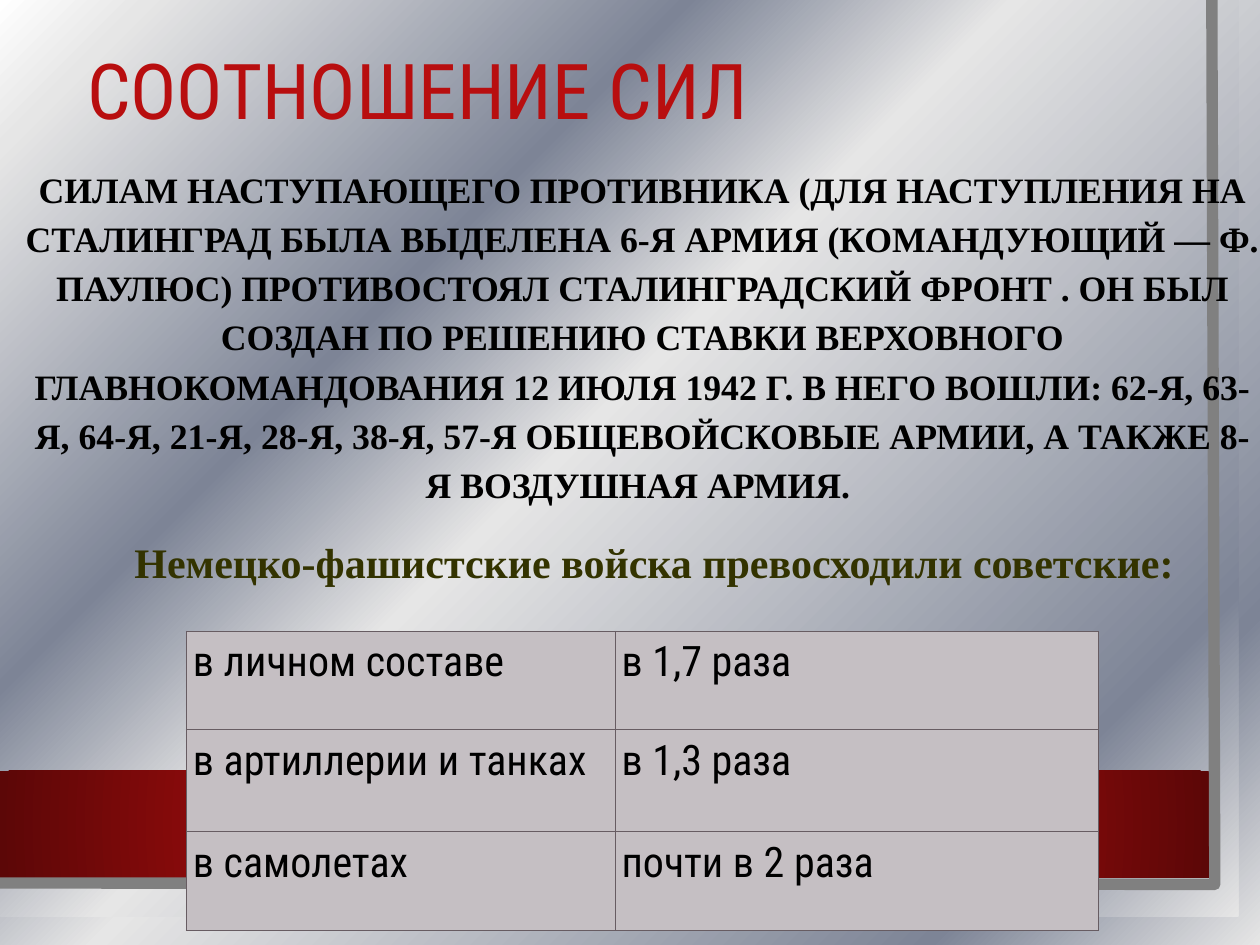
from lxml import etree
from pptx import Presentation
from pptx import util as u
from pptx.dml.color import RGBColor
from pptx.enum import shapes, text
from pptx.oxml import ns

COLORS = {
    "red": "B80E0F", "dark_red": "5C0707", "grey": "808080", "black": "000000",
    "olive": "333300", "cell": "C5BFC3", "border": "675C62",
    "white": "FFFFFF", "silver": "E6E6E6", "steel": "7D8496",
}
STEEL = [(0, "white"), (7, "silver"), (32, "steel"), (47, "silver"), (85, "steel"), (100, "silver")]
BAND = [(34, "red"), (100, "dark_red")]
SANS, SERIF = "Roboto Condensed", "Times New Roman"


def rgb(name):
    return RGBColor.from_string(COLORS[name])


def sub(parent, tag, **attrs):
    return etree.SubElement(parent, ns.qn(tag), {k: str(v) for k, v in attrs.items()})


class Deck:
    def __init__(self, width, height):
        self.prs = Presentation()
        self.prs.slide_width, self.prs.slide_height = u.Cm(width), u.Cm(height)
        self.s = self.prs.slides.add_slide(self.prs.slide_layouts[1])

    def gradient(self, fill, root, stops, angle=None):
        fill.gradient()
        grad = root.find(".//" + ns.qn("a:gradFill"))
        for child in list(grad):
            grad.remove(child)
        gs_list = sub(grad, "a:gsLst")
        for pos, color in stops:
            sub(sub(gs_list, "a:gs", pos=pos * 1000), "a:srgbClr", val=COLORS[color])
        if angle is None:
            circle = sub(grad, "a:path", path="circle")
            sub(circle, "a:fillToRect", l=50000, t=50000, r=50000, b=50000)
        else:
            sub(grad, "a:lin", ang=angle * 60000, scaled=0)

    def background(self, stops, angle):
        self.gradient(self.s.background.fill, self.s.element, stops, angle)

    def rect(self, box, stops, angle=None):
        sp = self.s.shapes.add_shape(shapes.MSO_SHAPE.RECTANGLE, *map(u.Cm, box))
        sp.shadow.inherit = False
        sp.line.fill.background()
        self.gradient(sp.fill, sp.element, stops, angle)

    def outline(self, points, color, width):
        start, *rest = [(u.Cm(x), u.Cm(y)) for x, y in points]
        builder = self.s.shapes.build_freeform(*start)
        builder.add_line_segments(rest, close=False)
        sp = builder.convert_to_shape()
        sp.shadow.inherit = False
        sp.fill.background()
        sp.line.color.rgb = rgb(color)
        sp.line.width = u.Pt(width)

    def add_text(self, p, words, font, size, color, bold=False):
        r = p.add_run()
        r.text = words
        r.font.name, r.font.size, r.font.bold = font, u.Pt(size), bold
        r.font.color.rgb = rgb(color)

    def placeholder(self, index, box, anchor, align, spacing, words, *style):
        sp = self.s.placeholders[index]
        sp.left, sp.top, sp.width, sp.height = map(u.Cm, box)
        tree = sp.element.getparent()
        tree.append(sp.element)
        tf = sp.text_frame
        tf.auto_size = text.MSO_AUTO_SIZE.NONE
        tf.vertical_anchor = anchor
        p = tf.paragraphs[0]
        pPr = p._p.get_or_add_pPr()
        pPr.set("marL", "0")
        pPr.set("indent", "0")
        sub(pPr, "a:buNone")
        p.alignment, p.line_spacing, p.space_before = align, spacing, u.Pt(0)
        self.add_text(p, words, *style)

    def table(self, left, top, widths, heights, rows, *style):
        frame = self.s.shapes.add_table(len(rows), len(widths), u.Cm(left), u.Cm(top),
                                        u.Cm(sum(widths)), u.Cm(sum(heights)))
        tbl = frame.table
        for col, width in zip(tbl.columns, widths):
            col.width = u.Cm(width)
        for row, height, values in zip(tbl.rows, heights, rows):
            row.height = u.Cm(height)
            for cell, value in zip(row.cells, values):
                self.cell(cell, value, *style)

    def cell(self, cell, value, *style):
        cell.margin_left = cell.margin_right = cell.margin_top = cell.margin_bottom = u.Cm(0.13)
        tcPr = cell._tc.get_or_add_tcPr()
        for side in ("a:lnL", "a:lnR", "a:lnT", "a:lnB"):
            line = sub(tcPr, side, w=u.Pt(0.75))
            sub(sub(line, "a:solidFill"), "a:srgbClr", val=COLORS["border"])
        cell.fill.solid()
        cell.fill.fore_color.rgb = rgb("cell")
        self.add_text(cell.text_frame.paragraphs[0], value, *style)

    def caption(self, box, indent, words, *style):
        tf = self.s.shapes.add_textbox(*map(u.Cm, box)).text_frame
        tf.word_wrap = False
        tf.auto_size = text.MSO_AUTO_SIZE.SHAPE_TO_FIT_TEXT
        tf.vertical_anchor = text.MSO_ANCHOR.MIDDLE
        p = tf.paragraphs[0]
        p._p.get_or_add_pPr().set("indent", str(u.Cm(indent)))
        p.alignment = text.PP_ALIGN.JUSTIFY
        self.add_text(p, words, *style)


def main():
    d = Deck(25.4, 19.05)
    d.background(STEEL, 45)
    d.rect((0, 0, 24.97, 18.47), STEEL, 45)
    d.rect((0, 15.54, 24.38, 2.16), BAND)
    d.outline([(24.43, 0), (24.49, 17.83), (-0.05, 17.8)], "grey", 6.5)
    d.placeholder(0, (1.5, 0.3, 21.67, 3.2), text.MSO_ANCHOR.MIDDLE, text.PP_ALIGN.LEFT, 0.9,
                  "СООТНОШЕНИЕ СИЛ", SANS, 44, "red")
    d.placeholder(1, (0.25, 3.12, 25.4, 7.19), text.MSO_ANCHOR.TOP, text.PP_ALIGN.CENTER, 1.15,
                  "СИЛАМ НАСТУПАЮЩЕГО ПРОТИВНИКА (ДЛЯ НАСТУПЛЕНИЯ НА СТАЛИНГРАД БЫЛА ВЫДЕЛЕНА "
                  "6-Я АРМИЯ (КОМАНДУЮЩИЙ — Ф. ПАУЛЮС) ПРОТИВОСТОЯЛ СТАЛИНГРАДСКИЙ ФРОНТ . ОН БЫЛ "
                  "СОЗДАН ПО РЕШЕНИЮ СТАВКИ ВЕРХОВНОГО ГЛАВНОКОМАНДОВАНИЯ 12 ИЮЛЯ 1942 Г. В НЕГО "
                  "ВОШЛИ: 62-Я, 63-Я, 64-Я, 21-Я, 28-Я, 38-Я, 57-Я ОБЩЕВОЙСКОВЫЕ АРМИИ, А ТАКЖЕ "
                  "8-Я ВОЗДУШНАЯ АРМИЯ. ", SERIF, 20.4, "black", True)
    d.table(3.76, 12.73, (8.64, 9.75), (1.98, 2.06, 1.98),
            [("в личном составе", "в 1,7 раза"),
             ("в артиллерии и танках", "в 1,3 раза"),
             ("в самолетах", "почти в 2 раза")], SANS, 24, "black")
    d.caption((1.75, 10.69, 22.4, 1.27), 0.71,
              "Немецко-фашистские войска превосходили советские:", SERIF, 24, "olive", True)
    d.prs.save("out.pptx")


if __name__ == "__main__":
    main()
